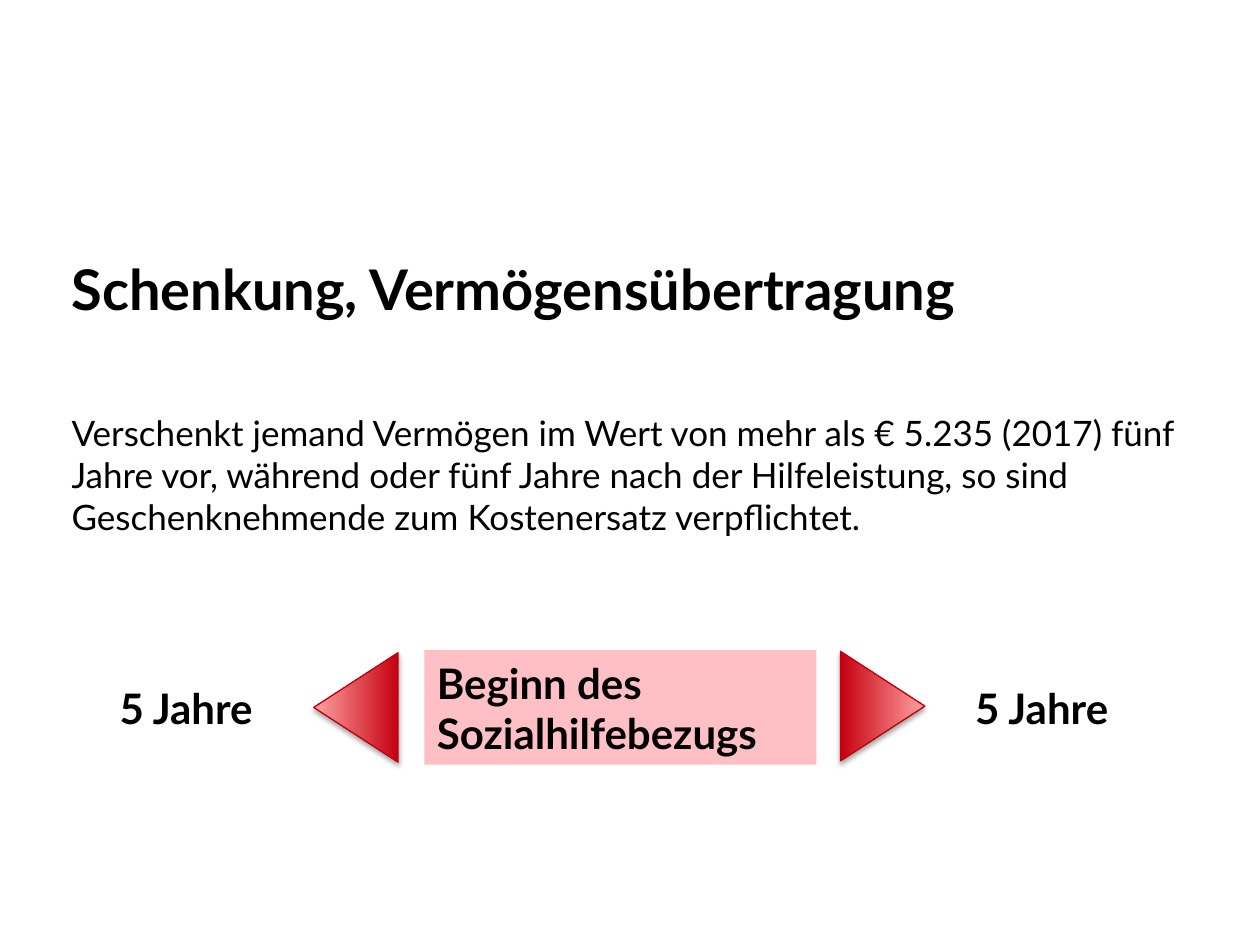
from lxml import etree
from pptx import Presentation
from pptx.dml.color import RGBColor
from pptx.enum.shapes import MSO_SHAPE
from pptx.enum.text import MSO_ANCHOR, PP_ALIGN
from pptx.oxml.ns import qn
from pptx.util import Pt

RECTANGLE = MSO_SHAPE.RECTANGLE
TRIANGLE = MSO_SHAPE.ISOSCELES_TRIANGLE
TOP, MIDDLE = MSO_ANCHOR.TOP, MSO_ANCHOR.MIDDLE
LEFT = PP_ALIGN.LEFT
FONT = "Lato"
COLORS = {
    "text": "000000",
    "pink": "FFC0C5",
    "dark_red": "C5000F",
    "light_red": "FFA2A2",
    "outline": "C1000F",
    "shadow": "000000",
}


def rgb(name):
    return RGBColor.from_string(COLORS[name])


def write(frame, text, size, bold=False, anchor=TOP):
    frame.word_wrap = True
    frame.vertical_anchor = anchor
    paragraph = frame.paragraphs[0]
    paragraph.text = text
    paragraph.alignment = LEFT
    paragraph.font.name = FONT
    paragraph.font.size = Pt(size)
    paragraph.font.bold = bold
    paragraph.font.color.rgb = rgb("text")


def add_text(slide, box, text, size, bold=False):
    area = slide.shapes.add_textbox(*map(Pt, box))
    write(area.text_frame, text, size, bold)


def add_soft_shadow(shape):
    shape.shadow.inherit = False
    effects = shape._element.spPr.find(qn("a:effectLst"))
    shadow = etree.SubElement(
        effects, qn("a:outerShdw"), blurRad=str(Pt(3.1)), dist=str(Pt(1.8)),
        dir="5400000", rotWithShape="0")
    color = etree.SubElement(shadow, qn("a:srgbClr"), val=COLORS["shadow"])
    etree.SubElement(color, qn("a:alpha"), val="35000")


def add_arrow(slide, center_x, center_y, rotation):
    base, height = 62.6, 48.2
    arrow = slide.shapes.add_shape(
        TRIANGLE, Pt(center_x - base / 2), Pt(center_y - height / 2),
        Pt(base), Pt(height))
    arrow.rotation = rotation
    arrow.fill.gradient()
    arrow.fill.gradient_angle = 90
    for stop, name in zip(arrow.fill.gradient_stops, ("dark_red", "light_red")):
        stop.color.rgb = rgb(name)
    arrow.line.color.rgb = rgb("outline")
    arrow.line.width = Pt(0.75)
    add_soft_shadow(arrow)


def add_timeline(slide, box):
    left, top, width, height = box
    label_width, label_height = 101.5, 36
    middle = top + height / 2

    add_arrow(slide, left + 142.2, middle, 270)
    add_arrow(slide, left + 443.2, middle - 0.7, 90)

    start = slide.shapes.add_shape(
        RECTANGLE, Pt(left + 181.4), Pt(top), Pt(224), Pt(height))
    start.shadow.inherit = False
    start.fill.solid()
    start.fill.fore_color.rgb = rgb("pink")
    start.line.fill.background()
    write(start.text_frame, "Beginn des Sozialhilfebezugs", 24, True, MIDDLE)

    for label_left in (left, left + width - label_width):
        label_box = (label_left, middle - label_height / 2, label_width, label_height)
        add_text(slide, label_box, "5 Jahre", 24, True)


def main():
    deck = Presentation()
    deck.slide_width, deck.slide_height = Pt(720), Pt(540)
    slide = deck.slides.add_slide(deck.slide_layouts[6])
    add_text(slide, (33.8, 141.8, 663, 76.3),
             "Schenkung, Vermögensübertragung", 32, True)
    add_text(slide, (33.8, 231.8, 663, 291),
             "Verschenkt jemand Vermögen im Wert von mehr als € 5.235 (2017) "
             "fünf Jahre vor, während oder fünf Jahre nach der Hilfeleistung, "
             "so sind Geschenknehmende zum Kostenersatz verpflichtet.", 20)
    add_timeline(slide, (61.2, 371.5, 590.4, 65.5))
    deck.save("out.pptx")


if __name__ == "__main__":
    main()
